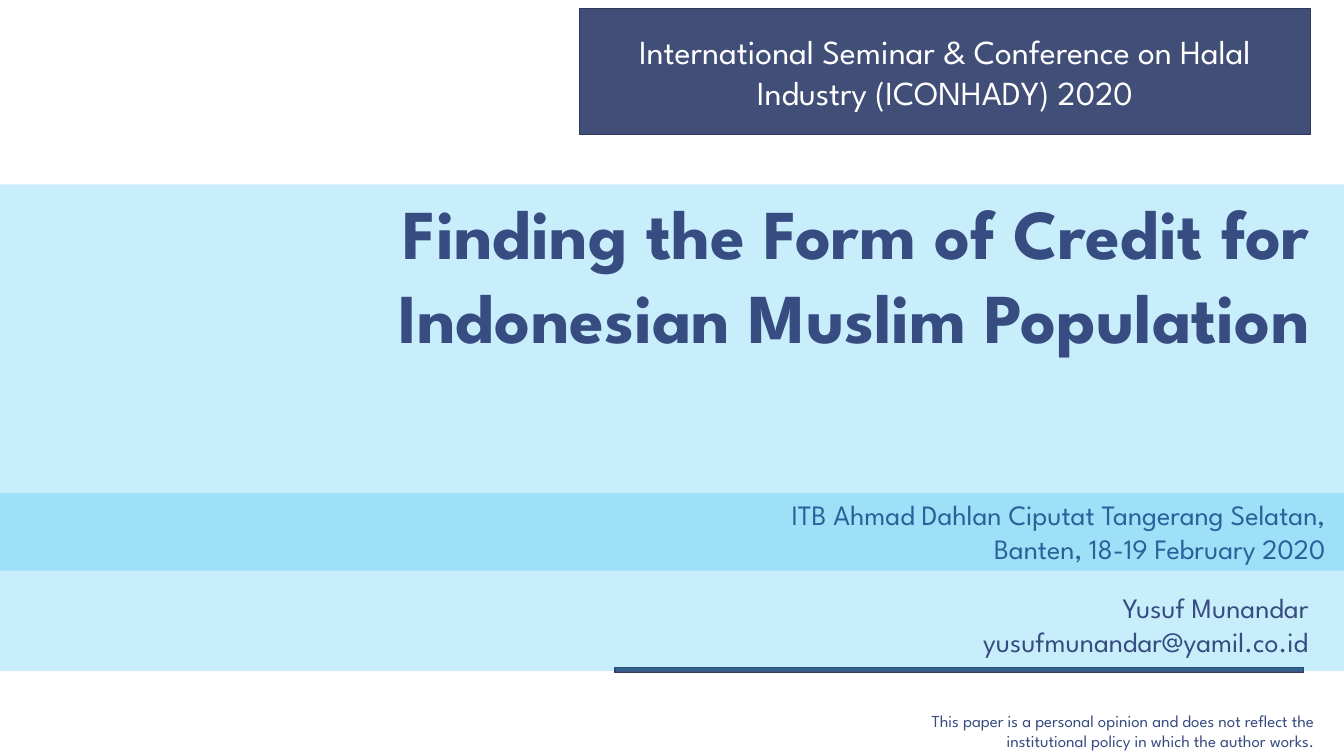
from dataclasses import dataclass

from lxml import etree
from pptx import Presentation
from pptx.dml.color import RGBColor
from pptx.enum.shapes import MSO_SHAPE
from pptx.enum.text import MSO_ANCHOR, PP_ALIGN
from pptx.oxml.ns import qn
from pptx.util import Pt

RECT = MSO_SHAPE.RECTANGLE
TOP, MIDDLE = MSO_ANCHOR.TOP, MSO_ANCHOR.MIDDLE
RIGHT, CENTER = PP_ALIGN.RIGHT, PP_ALIGN.CENTER


@dataclass(frozen=True)
class Theme:
    font: str = "League Spartan"
    sky: str = "00B0F0"
    navy: str = "414E77"
    edge: str = "303A58"
    ink: str = "374C81"
    white: str = "FFFFFF"
    title: float = 50
    banner: float = 24
    body: float = 20
    note: float = 12


@dataclass(frozen=True)
class Box:
    left: float
    top: float
    width: float
    height: float

    def lengths(self) -> tuple:
        return Pt(self.left), Pt(self.top), Pt(self.width), Pt(self.height)


@dataclass(frozen=True)
class Label:
    box: Box
    lines: tuple[str, ...]
    size: float
    bold: bool = False


THEME = Theme()
WIDTH, HEIGHT = 960, 540
PANEL_TOP, PLACE_TOP = 131.8, 352.1

TITLE = Label(Box(270, PANEL_TOP, 673.2, 189.4),
              ("Finding the Form of Credit for Indonesian Muslim Population",),
              THEME.title, True)
PLACE = Label(Box(545.8, PLACE_TOP, 408.2, 55.4),
              ("ITB Ahmad Dahlan Ciputat Tangerang Selatan, Banten, 18-19 February 2020",),
              THEME.body)
AUTHOR = Label(Box(617.8, 418.3, 324, 55.4),
               ("Yusuf Munandar", "yusufmunandar@yamil.co.id"), THEME.body)
DISCLAIMER = Label(Box(622.1, 504, 324, 36),
                   ("This paper is a personal opinion and does not reflect the "
                    "institutional policy in which the author works.",), THEME.note)

UPPER_PANEL = Box(0, PANEL_TOP, WIDTH, 275.8)
LOWER_PANEL = Box(0, PLACE_TOP, WIDTH, 127.4)
RULE = Box(439.2, 476.6, 491.8, 3.6)
BANNER = Box(414, 6, 522, 90)


def write(sp, *lines: str, size: float, color: str = THEME.ink, bold: bool = False,
          align=RIGHT, anchor=TOP) -> None:
    tf = sp.text_frame
    tf.word_wrap = True
    tf.vertical_anchor = anchor
    for i, line in enumerate(lines):
        p = tf.add_paragraph() if i else tf.paragraphs[0]
        p.alignment = align
        r = p.add_run()
        r.text = line
        r.font.name = THEME.font
        r.font.size = Pt(size)
        r.font.bold = bold
        r.font.color.rgb = RGBColor.from_string(color)


def add_rect(s, box: Box, fill: str):
    sp = s.shapes.add_shape(RECT, *box.lengths())
    sp.shadow.inherit = False
    sp.fill.solid()
    sp.fill.fore_color.rgb = RGBColor.from_string(fill)
    return sp


def add_panel(s, box: Box) -> None:
    sp = add_rect(s, box, THEME.sky)
    sp.line.fill.background()
    color = sp.fill._xPr.find(qn("a:solidFill")).find(qn("a:srgbClr"))
    etree.SubElement(color, qn("a:alpha")).set("val", "21000")


def add_block(s, box: Box):
    sp = add_rect(s, box, THEME.navy)
    sp.line.color.rgb = RGBColor.from_string(THEME.edge)
    sp.line.width = Pt(1)
    return sp


def add_label(s, label: Label) -> None:
    sp = s.shapes.add_textbox(*label.box.lengths())
    write(sp, *label.lines, size=label.size, bold=label.bold)


def main() -> None:
    prs = Presentation()
    prs.slide_width, prs.slide_height = Pt(WIDTH), Pt(HEIGHT)
    s = prs.slides.add_slide(prs.slide_layouts[6])
    add_panel(s, UPPER_PANEL)
    add_label(s, TITLE)
    add_label(s, PLACE)
    add_block(s, RULE)
    add_panel(s, LOWER_PANEL)
    add_label(s, AUTHOR)
    add_label(s, DISCLAIMER)
    write(add_block(s, BANNER),
          "International Seminar & Conference on Halal Industry (ICONHADY) 2020",
          size=THEME.banner, color=THEME.white, align=CENTER, anchor=MIDDLE)
    prs.save("out.pptx")


if __name__ == "__main__":
    main()
